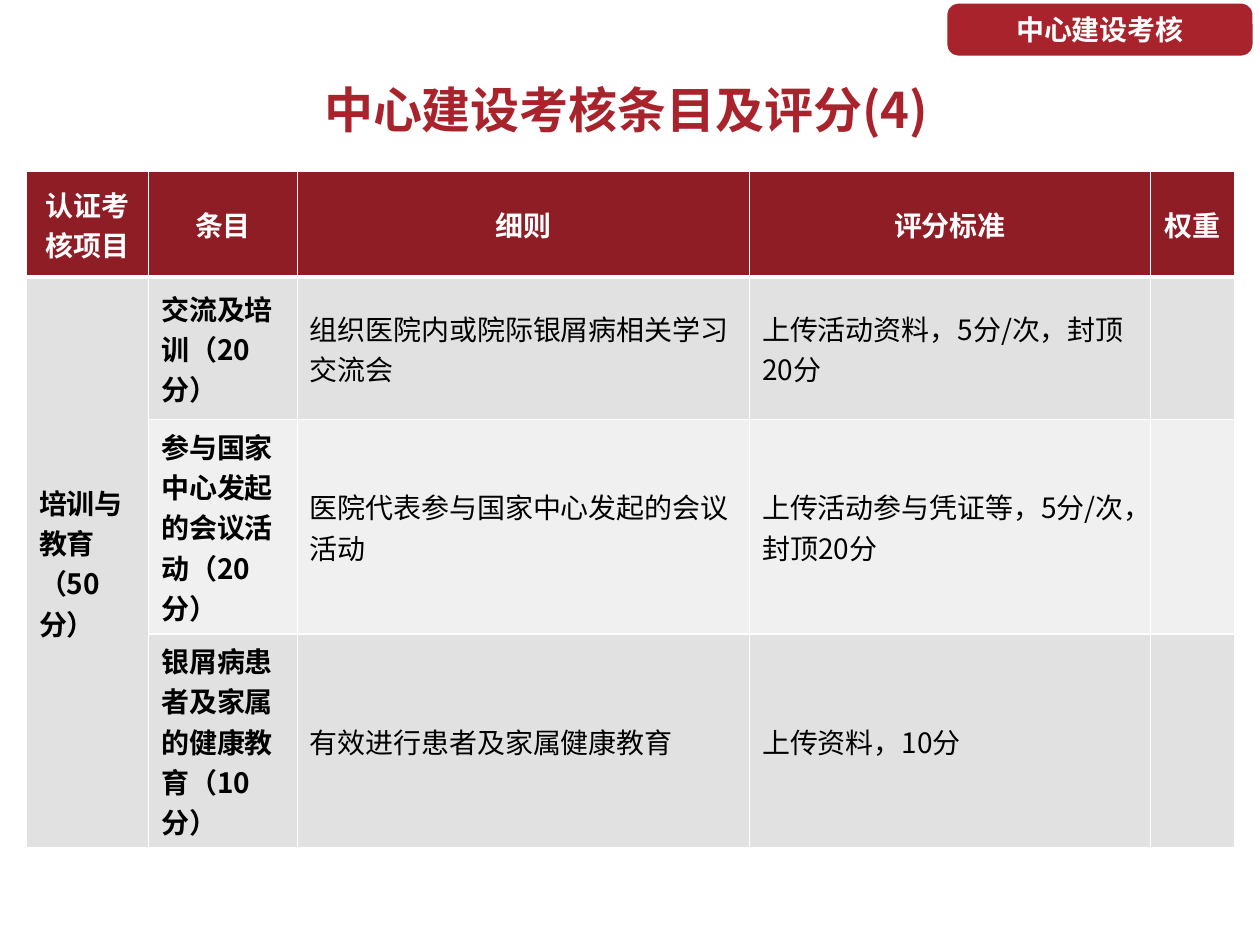
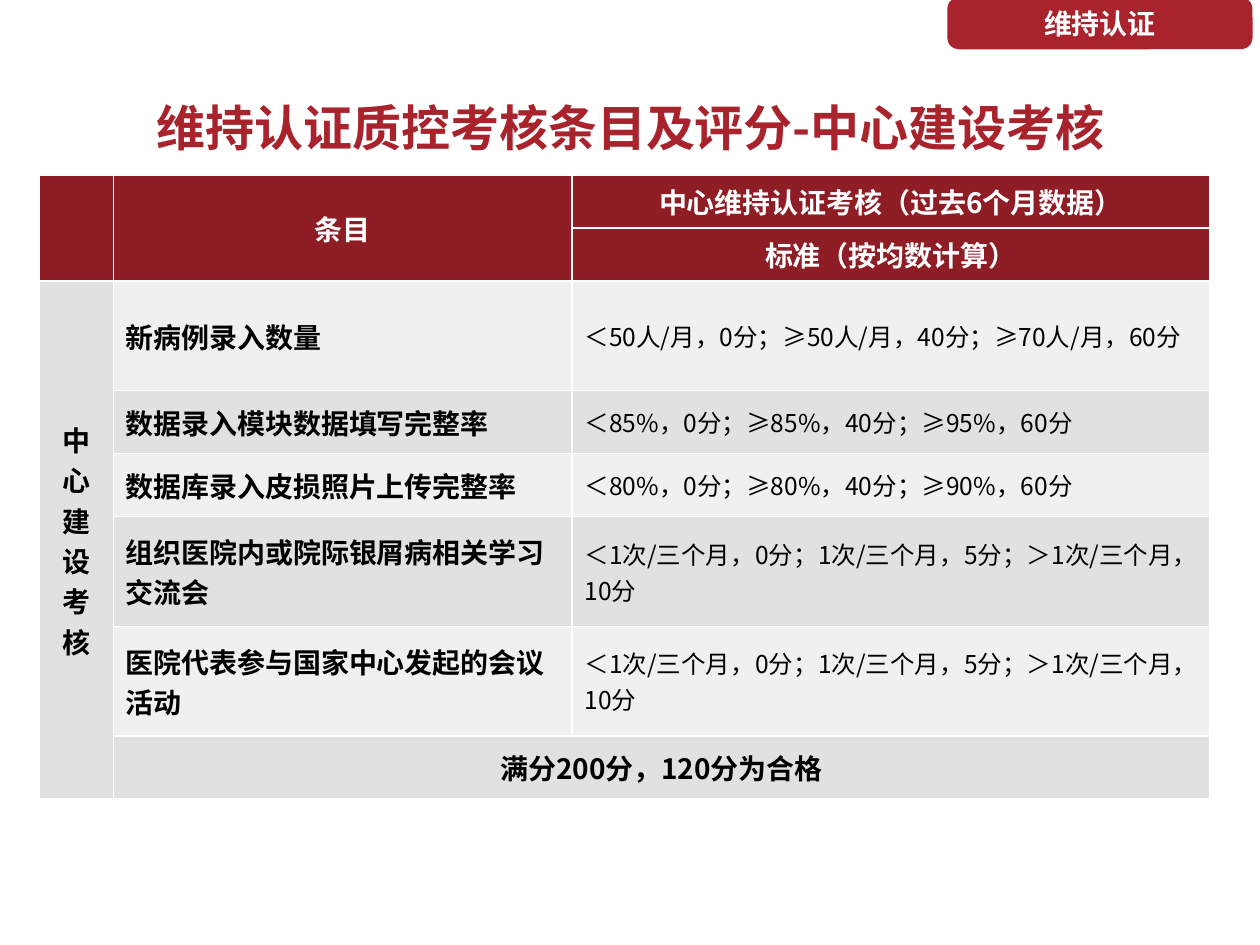
from dataclasses import dataclass

from lxml import etree
from pptx import Presentation
from pptx import util as u
from pptx.dml.color import RGBColor
from pptx.enum import shapes, text
from pptx.oxml import ns

PX = u.Inches(1) // 100
FONT = "Noto Sans CJK SC"
RED = RGBColor(0xA9, 0x23, 0x2D)
WINE = RGBColor(0x8F, 0x1D, 0x25)
DARK = RGBColor(0xE1, 0xE1, 0xE1)
PALE = RGBColor(0xF0, 0xF0, 0xF0)
WHITE = RGBColor(0xFF, 0xFF, 0xFF)
BLACK = RGBColor(0, 0, 0)
LEFT, MID = text.PP_ALIGN.LEFT, text.PP_ALIGN.CENTER


@dataclass(frozen=True)
class Box:
    x: int
    y: int
    w: int
    h: int

    def emu(self) -> list[int]:
        return [n * PX for n in (self.x, self.y, self.w, self.h)]


@dataclass(frozen=True)
class Grid:
    """A score table; spans hold first row, first column, last row, last column."""
    box: Box
    cols: list[int]
    rows: list[int]
    cells: list[list[str]]
    spans: list[tuple[int, int, int, int]]
    heads: int
    rule: float
    small: int
    mids: list[tuple[int, int]]


@dataclass(frozen=True)
class Page:
    badge: str
    top: int
    title: str
    place: Box
    grid: Grid


def style(frame, size: float, color: RGBColor, bold: bool, align) -> None:
    for para in frame.paragraphs:
        para.alignment = align
        for run in para.runs:
            font = run.font
            font.size, font.bold, font.name = u.Pt(size), bold, FONT
            font.color.rgb = color
            east = etree.SubElement(run._r.get_or_add_rPr(), ns.qn("a:ea"))
            east.set("typeface", FONT)


def edge(cell, top: float, base: float) -> None:
    """Draw white borders; they must precede the fill in the cell's XML."""
    props = cell._tc.get_or_add_tcPr()
    sides = {"L": 1, "R": 1, "T": top, "B": base}
    for i, (side, width) in enumerate(sides.items()):
        line = etree.Element(ns.qn(f"a:ln{side}"), w=str(u.Pt(width)))
        fill = etree.SubElement(line, ns.qn("a:solidFill"))
        etree.SubElement(fill, ns.qn("a:srgbClr"), val=str(WHITE))
        props.insert(i, line)


def draw_grid(slide, grid: Grid) -> None:
    frame = slide.shapes.add_table(len(grid.rows), len(grid.cols), *grid.box.emu())
    table = frame.table
    table.first_row = table.horz_banding = False
    for col, width in zip(table.columns, grid.cols):
        col.width = width * PX
    for row, height in zip(table.rows, grid.rows):
        row.height = height * PX
    for r, words in enumerate(grid.cells):
        head = r < grid.heads
        for c, word in enumerate(words):
            cell = table.cell(r, c)
            cell.vertical_anchor = text.MSO_ANCHOR.MIDDLE
            cell.fill.solid()
            shade = DARK if c == 0 or r % 2 else PALE
            cell.fill.fore_color.rgb = WINE if head else shade
            edge(cell, grid.rule if r == grid.heads else 1,
                 grid.rule if r == grid.heads - 1 else 1)
            cell.text_frame.text = word
            bold = head or c < 2
            style(cell.text_frame, 16 if bold else grid.small,
                  WHITE if head else BLACK, bold,
                  MID if head or (r, c) in grid.mids else LEFT)
    for r, c, last, end in grid.spans:
        table.cell(r, c).merge(table.cell(last, end))


def draw_badge(slide, word: str, top: int) -> None:
    badge = slide.shapes.add_shape(
        shapes.MSO_SHAPE.ROUNDED_RECTANGLE, *Box(755, top, 236, 35).emu())
    badge.shadow.inherit = False
    badge.fill.solid()
    badge.fill.fore_color.rgb = RED
    badge.line.color.rgb = RED
    badge.line.width = u.Pt(4.5)
    frame = badge.text_frame
    frame.text = word
    frame.vertical_anchor = text.MSO_ANCHOR.MIDDLE
    style(frame, 16, WHITE, True, MID)


def draw_title(slide, word: str, place: Box) -> None:
    title = slide.shapes.title
    title.left, title.top, title.width, title.height = place.emu()
    frame = title.text_frame
    frame.text = word
    frame.auto_size = text.MSO_AUTO_SIZE.NONE
    frame.vertical_anchor = text.MSO_ANCHOR.MIDDLE
    frame.paragraphs[0].line_spacing = 0.9
    style(frame, 28, RED, True, MID)


MEET = "＜1次/三个月，0分；1次/三个月，5分；＞1次/三个月，10分"

BUILD = Grid(
    Box(21, 136, 959, 508), [97, 118, 359, 318, 67], [84, 113, 155, 155],
    [["认证考核项目", "条目", "细则", "评分标准", "权重"],
     ["培训与教育\n（50分）", "交流及培训（20分）",
      "组织医院内或院际银屑病相关学习交流会", "上传活动资料，5分/次，封顶20分", ""],
     ["", "参与国家中心发起的会议活动（20分）",
      "医院代表参与国家中心发起的会议活动", "上传活动参与凭证等，5分/次，封顶20分", ""],
     ["", "银屑病患者及家属的健康教育（10分）",
      "有效进行患者及家属健康教育", "上传资料，10分", ""]],
    spans=[(1, 0, 3, 0)], heads=1, rule=3, small=16, mids=[])

RENEW = Grid(
    Box(31, 139, 930, 483), [59, 364, 506], [26, 24, 87, 50, 50, 87, 87, 50],
    [["", "条目", "中心维持认证考核（过去6个月数据）"],
     ["", "", "标准（按均数计算）"],
     ["中心建设考核", "新病例录入数量", "＜50人/月，0分；≥50人/月，40分；≥70人/月，60分"],
     ["", "数据录入模块数据填写完整率", "＜85%，0分；≥85%，40分；≥95%，60分"],
     ["", "数据库录入皮损照片上传完整率", "＜80%，0分；≥80%，40分；≥90%，60分"],
     ["", "组织医院内或院际银屑病相关学习交流会", MEET],
     ["", "医院代表参与国家中心发起的会议活动", MEET],
     ["", "满分200分，120分为合格", ""]],
    spans=[(0, 0, 1, 0), (0, 1, 1, 1), (2, 0, 7, 0), (7, 1, 7, 2)],
    heads=2, rule=1, small=14, mids=[(2, 0), (7, 1)])

PAGES = [
    Page("中心建设考核", 6, "中心建设考核条目及评分(4)", Box(66, 53, 862, 72), BUILD),
    Page("维持认证", 1, "维持认证质控考核条目及评分-中心建设考核",
         Box(39, 68, 923, 72), RENEW),
]


def main() -> None:
    deck = Presentation()
    deck.slide_width, deck.slide_height = 1000 * PX, 750 * PX
    for page in PAGES:
        slide = deck.slides.add_slide(deck.slide_layouts.get_by_name("Title Only"))
        draw_title(slide, page.title, page.place)
        draw_grid(slide, page.grid)
        draw_badge(slide, page.badge, page.top)
    deck.save("out.pptx")


if __name__ == "__main__":
    main()
